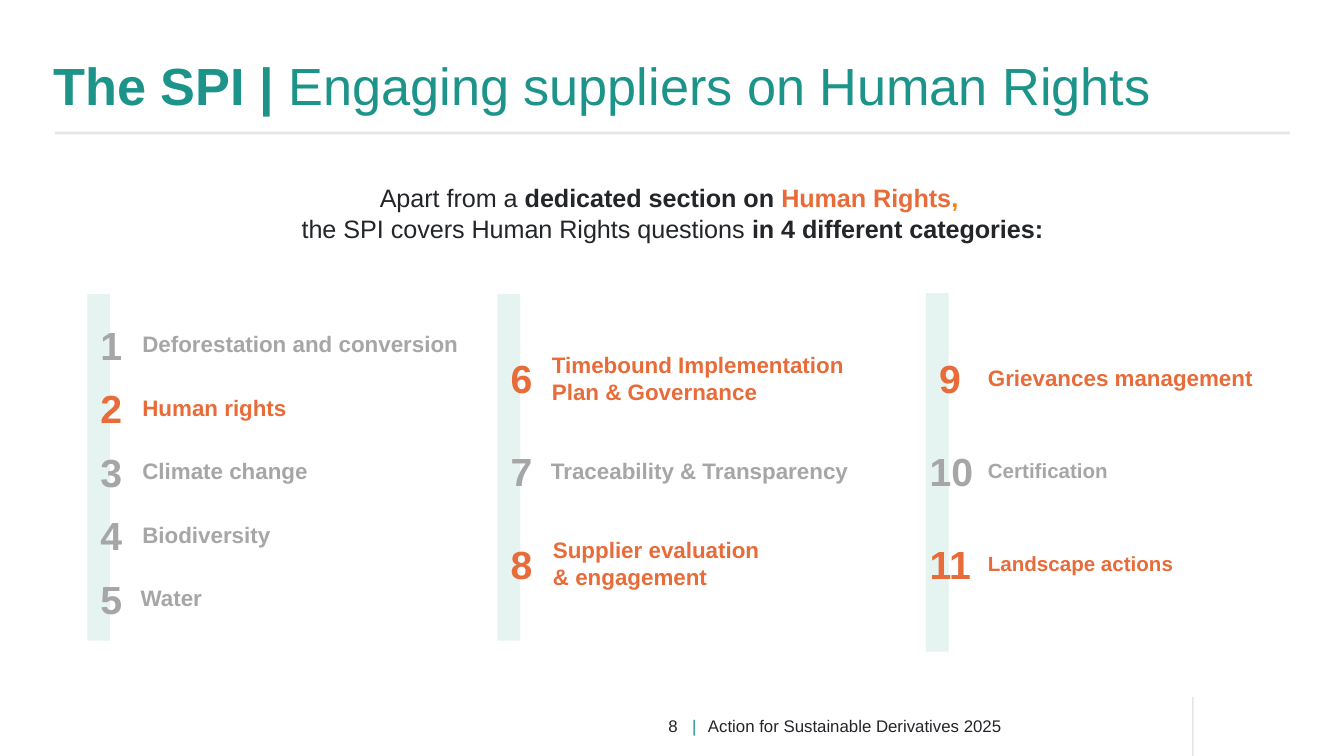
from dataclasses import dataclass

from lxml import etree
from pptx import Presentation
from pptx.dml.color import RGBColor as Color
from pptx.enum.shapes import MSO_SHAPE as Shape
from pptx.enum.text import MSO_ANCHOR as Anchor, PP_ALIGN as Align
from pptx.oxml.ns import qn
from pptx.util import Cm, Pt


@dataclass(frozen=True)
class Theme:
    font: str = "Arial"
    teal: str = "1D948A"
    mint: str = "98D4CB"
    rule: str = "E7E5E6"
    ink: str = "232529"
    muted: str = "A6A6A6"
    accent: str = "E76C39"
    comma: str = "FF7E00"
    title: float = 28
    number: float = 21
    intro: float = 13.5
    label: float = 12
    small_label: float = 11
    footer: float = 9


@dataclass(frozen=True)
class Topic:
    number: int
    text: str
    width: float = 5.66
    height: float = 1.47
    active: bool = False
    size: float = Theme.label


@dataclass(frozen=True)
class Column:
    left: float
    top: float
    height: float
    label_left: float
    first_middle: float
    step: float
    topics: tuple


THEME = Theme()

COLUMNS = (
    Column(1.65, 5.56, 6.55, 2.37, 6.5, 1.2, (
        Topic(1, "Deforestation and conversion", width=6.76),
        Topic(2, "Human rights", active=True),
        Topic(3, "Climate change"),
        Topic(4, "Biodiversity"),
        Topic(5, "Water", height=0.81),
    )),
    Column(9.4, 5.56, 6.55, 10.13, 7.14, 1.75, (
        Topic(6, "Timebound Implementation Plan & Governance",
              width=7, height=1.07, active=True),
        Topic(7, "Traceability & Transparency", width=6.4, height=0.69),
        Topic(8, "Supplier evaluation & engagement", width=4.65, active=True),
    )),
    Column(17.5, 5.54, 6.78, 18.35, 7.14, 1.75, (
        Topic(9, "Grievances management", width=6.6, active=True),
        Topic(10, "Certification", size=THEME.small_label),
        Topic(11, "Landscape actions", active=True, size=THEME.small_label),
    )),
)


def write_text(shape, paragraphs, *, size, color=THEME.ink, bold=False,
               align=Align.LEFT, anchor=Anchor.TOP, line_spacing=None):
    frame = shape.text_frame
    frame.word_wrap = True
    frame.vertical_anchor = anchor
    for index, spans in enumerate(paragraphs):
        para = frame.paragraphs[0] if index == 0 else frame.add_paragraph()
        para.alignment = align
        para.line_spacing = line_spacing
        for text, changes in spans:
            span = para.add_run()
            span.text = text
            span.font.name = THEME.font
            span.font.size = Pt(size)
            span.font.bold = changes.get("bold", bold)
            span.font.color.rgb = Color.from_string(changes.get("color", color))


def add_text(page, left, top, width, height, paragraphs, **style):
    box = page.shapes.add_textbox(Cm(left), Cm(top), Cm(width), Cm(height))
    write_text(box, paragraphs, **style)


def add_bar(page, left, top, width, height, color, opacity=100):
    bar = page.shapes.add_shape(
        Shape.RECTANGLE, Cm(left), Cm(top), Cm(width), Cm(height))
    bar.shadow.inherit = False
    bar.line.fill.background()
    bar.fill.solid()
    bar.fill.fore_color.rgb = Color.from_string(color)
    if opacity < 100:
        shade = bar.fill._xPr.find(qn("a:solidFill"))[0]
        etree.SubElement(shade, qn("a:alpha")).set("val", str(opacity * 1000))


def add_label(page, left, middle, topic, color):
    label = page.shapes.add_shape(
        Shape.ROUNDED_RECTANGLE, Cm(left), Cm(middle - topic.height / 2),
        Cm(topic.width), Cm(topic.height))
    label.shadow.inherit = False
    label.fill.background()
    label.line.fill.background()
    write_text(label, [[(topic.text, {})]], size=topic.size, color=color,
               bold=True, anchor=Anchor.MIDDLE)


def add_column(page, column):
    add_bar(page, column.left, column.top, 0.43, column.height,
            THEME.mint, opacity=25)
    for row, topic in enumerate(column.topics):
        middle = column.first_middle + row * column.step
        color = THEME.accent if topic.active else THEME.muted
        add_label(page, column.label_left, middle, topic, color)
        digits = str(topic.number)
        extra = len(digits) - 1
        add_text(page, column.left - 0.18 * extra, middle - 0.56,
                 0.97 + 0.5 * extra, 1.14, [[(digits, {})]],
                 size=THEME.number, color=color, bold=True)


def add_header(page):
    add_bar(page, 1.04, 2.49, 23.34, 0.05, THEME.rule)
    add_text(page, 0.76, 0.23, 23.6, 2.11,
             [[("The SPI | ", {"bold": True}),
               ("Engaging suppliers on Human Rights", {})]],
             size=THEME.title, color=THEME.teal, anchor=Anchor.BOTTOM,
             line_spacing=0.9)
    add_text(page, 5, 3.33, 15.42, 1.42, [
        [("Apart from a ", {}),
         ("dedicated section on ", {"bold": True}),
         ("Human Rights", {"bold": True, "color": THEME.accent}),
         (", ", {"bold": True, "color": THEME.comma})],
        [("the SPI covers Human Rights questions ", {}),
         ("in 4 different categories:", {"bold": True})],
    ], size=THEME.intro, align=Align.CENTER)


def add_footer(page):
    add_bar(page, 22.53, 13.18, 0.03, 1.11, THEME.rule)
    for left, width, text, color, align in (
        (11.35, 1.71, "8", THEME.ink, Align.RIGHT),
        (12.41, 1, "|", THEME.teal, Align.RIGHT),
        (13.13, 9.25, "Action for Sustainable Derivatives 2025",
         THEME.ink, Align.LEFT),
    ):
        add_text(page, left, 13.34, width, 0.76, [[(text, {})]],
                 size=THEME.footer, color=color, align=align,
                 anchor=Anchor.MIDDLE)


def main():
    deck = Presentation()
    deck.slide_width, deck.slide_height = Cm(25.4), Cm(14.29)
    page = deck.slides.add_slide(deck.slide_layouts[6])
    add_header(page)
    for column in COLUMNS:
        add_column(page, column)
    add_footer(page)
    deck.save("out.pptx")


if __name__ == "__main__":
    main()
